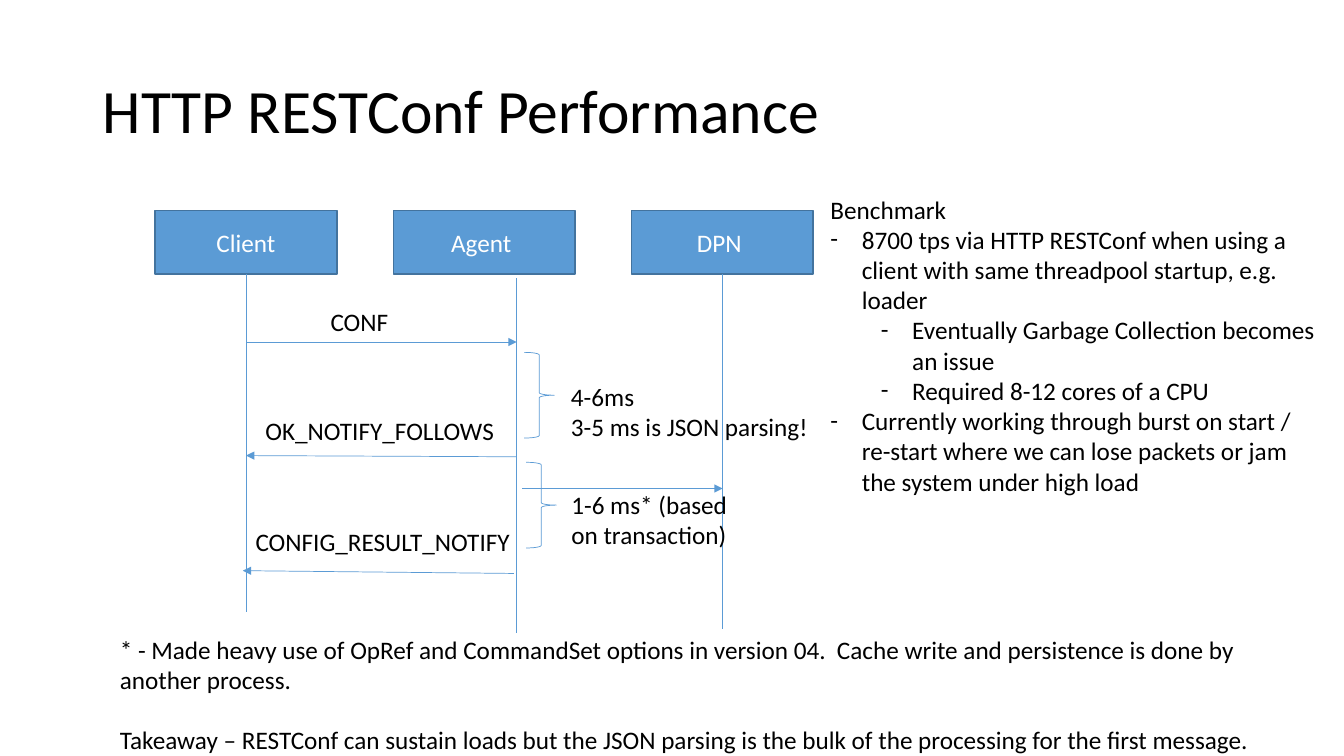
from dataclasses import dataclass

import pptx
import pptx.dml.color
import pptx.enum.shapes
import pptx.enum.text
import pptx.oxml.ns
import pptx.util
from lxml import etree

Cm = pptx.util.Cm
Pt = pptx.util.Pt
RGBColor = pptx.dml.color.RGBColor
MSO_SHAPE = pptx.enum.shapes.MSO_SHAPE
MSO_ANCHOR = pptx.enum.text.MSO_ANCHOR
PP_ALIGN = pptx.enum.text.PP_ALIGN
qn = pptx.oxml.ns.qn

BLUE = RGBColor(0x5B, 0x9B, 0xD5)
DARK_BLUE = RGBColor(0x43, 0x73, 0x9E)
BLACK = RGBColor(0, 0, 0)
WHITE = RGBColor(0xFF, 0xFF, 0xFF)
FONT = "Calibri"

ACTOR_LEFT, ACTOR_TOP, ACTOR_STEP = 3.91, 5.3, 6.0
ACTOR_W, ACTOR_H = 4.58, 1.61
BRACE_W, BRACE_H = 0.76, 2.16
INDENT = 0.79
LEVEL_STEP = 1.27


@dataclass
class Line:
    x1: float
    y1: float
    x2: float
    y2: float
    arrow: bool = False


@dataclass
class Para:
    text: str
    bullet_level: int | None = None
    space_before: float = 0


@dataclass
class TextBox:
    left: float
    top: float
    width: float
    height: float
    paras: list[Para]
    wrap: bool = True


ACTORS = ["Client", "Agent ", "DPN "]

CLIENT_LIFELINE = Line(6.2, 6.91, 6.2, 15.42)
LINES = [
    Line(13.02, 7.01, 13.02, 15.95),
    Line(18.21, 6.91, 18.21, 15.85),
    Line(6.2, 8.62, 13.02, 8.62, True),
    Line(13.02, 11.51, 6.2, 11.48, True),
    Line(12.95, 14.45, 6.12, 14.38, True),
    Line(13.16, 12.31, 18.21, 12.31, True),
]

BRACES = [(13.21, 8.88), (13.26, 11.65)]

TEXTS = [
    TextBox(8.08, 7.59, 1.98, 1.02, [Para("CONF")], False),
    TextBox(6.44, 10.34, 6.32, 1.02, [Para("OK_NOTIFY_FOLLOWS")], False),
    TextBox(6.19, 13.13, 6.99, 1.02, [Para("CONFIG_RESULT_NOTIFY")], False),
    TextBox(14.14, 9.49, 6.55, 1.8,
            [Para("4-6ms"), Para("3-5 ms is JSON parsing!")], False),
    TextBox(14.15, 12.2, 5.21, 1.8, [Para("1-6 ms* (based on transaction)")]),
    TextBox(20.68, 4.76, 12.78, 7.95, [
        Para("Benchmark"),
        Para("8700 tps via HTTP RESTConf when using a client with same "
             "threadpool startup, e.g. loader", 0),
        Para("Eventually Garbage Collection becomes an issue", 1),
        Para("Required 8-12 cores of a CPU", 1),
        Para("Currently working through burst on start / re-start where we "
             "can lose packets or jam the system under high load", 0),
    ]),
    TextBox(2.77, 15.85, 29.26, 4.11, [
        Para("* - Made heavy use of OpRef and CommandSet options in version "
             "04.  Cache write and persistence is done by another process."),
        Para("Takeaway – RESTConf can sustain loads but the JSON parsing is "
             "the bulk of the processing for the first message.",
             space_before=21.5),
    ]),
]


def add_run(p, text: str, size: float, color: RGBColor) -> None:
    r = p.add_run()
    r.text = text
    r.font.name = FONT
    r.font.size = Pt(size)
    r.font.color.rgb = color


def add_bullet(p, level: int) -> None:
    p.level = level
    pPr = p._p.get_or_add_pPr()
    pPr.set("marL", str(Cm(INDENT + level * LEVEL_STEP)))
    pPr.set("indent", str(-Cm(INDENT)))
    etree.SubElement(pPr, qn("a:buFont")).set("typeface", FONT)
    etree.SubElement(pPr, qn("a:buChar")).set("char", "-")


def add_title(s, text: str) -> None:
    sp = s.shapes.add_textbox(Cm(2.34), Cm(1.02), Cm(29.21), Cm(3.68))
    tf = sp.text_frame
    tf.word_wrap = True
    tf.vertical_anchor = MSO_ANCHOR.MIDDLE
    p = tf.paragraphs[0]
    p.line_spacing = 0.9
    add_run(p, text, 44, BLACK)


def add_text(s, box: TextBox) -> None:
    sp = s.shapes.add_textbox(Cm(box.left), Cm(box.top),
                              Cm(box.width), Cm(box.height))
    tf = sp.text_frame
    tf.word_wrap = box.wrap
    tf.auto_size = pptx.enum.text.MSO_AUTO_SIZE.SHAPE_TO_FIT_TEXT
    for i, para in enumerate(box.paras):
        p = tf.add_paragraph() if i else tf.paragraphs[0]
        if para.space_before:
            p.space_before = Pt(para.space_before)
        if para.bullet_level is not None:
            add_bullet(p, para.bullet_level)
        add_run(p, para.text, 18, BLACK)


def add_actor(s, index: int, name: str):
    sp = s.shapes.add_shape(MSO_SHAPE.RECTANGLE,
                            Cm(ACTOR_LEFT + index * ACTOR_STEP), Cm(ACTOR_TOP),
                            Cm(ACTOR_W), Cm(ACTOR_H))
    sp.shadow.inherit = False
    sp.fill.solid()
    sp.fill.fore_color.rgb = BLUE
    sp.line.color.rgb = DARK_BLUE
    sp.line.width = Pt(1)
    tf = sp.text_frame
    tf.vertical_anchor = MSO_ANCHOR.MIDDLE
    p = tf.paragraphs[0]
    p.alignment = PP_ALIGN.CENTER
    add_run(p, name, 18, WHITE)
    return sp


def add_line(s, line: Line):
    cxn = s.shapes.add_connector(pptx.enum.shapes.MSO_CONNECTOR.STRAIGHT,
                                 Cm(line.x1), Cm(line.y1),
                                 Cm(line.x2), Cm(line.y2))
    cxn.line.color.rgb = BLUE
    cxn.line.width = Pt(0.5)
    if line.arrow:
        ln = cxn.line._get_or_add_ln()
        etree.SubElement(ln, qn("a:tailEnd")).set("type", "triangle")
    etree.SubElement(cxn._element.spPr, qn("a:effectLst"))
    return cxn


def add_brace(s, left: float, top: float) -> None:
    sp = s.shapes.add_shape(MSO_SHAPE.RIGHT_BRACE, Cm(left), Cm(top),
                            Cm(BRACE_W), Cm(BRACE_H))
    sp.shadow.inherit = False
    sp.fill.background()
    sp.line.color.rgb = BLUE
    sp.line.width = Pt(0.5)


def main() -> None:
    prs = pptx.Presentation()
    prs.slide_width, prs.slide_height = Cm(33.87), Cm(19.05)
    s = prs.slides.add_slide(prs.slide_layouts[6])
    add_title(s, "HTTP RESTConf Performance")
    actors = [add_actor(s, i, name) for i, name in enumerate(ACTORS)]
    add_line(s, CLIENT_LIFELINE).begin_connect(actors[0], 2)
    for line in LINES:
        add_line(s, line)
    for left, top in BRACES:
        add_brace(s, left, top)
    for box in TEXTS:
        add_text(s, box)
    prs.save("out.pptx")


if __name__ == "__main__":
    main()
